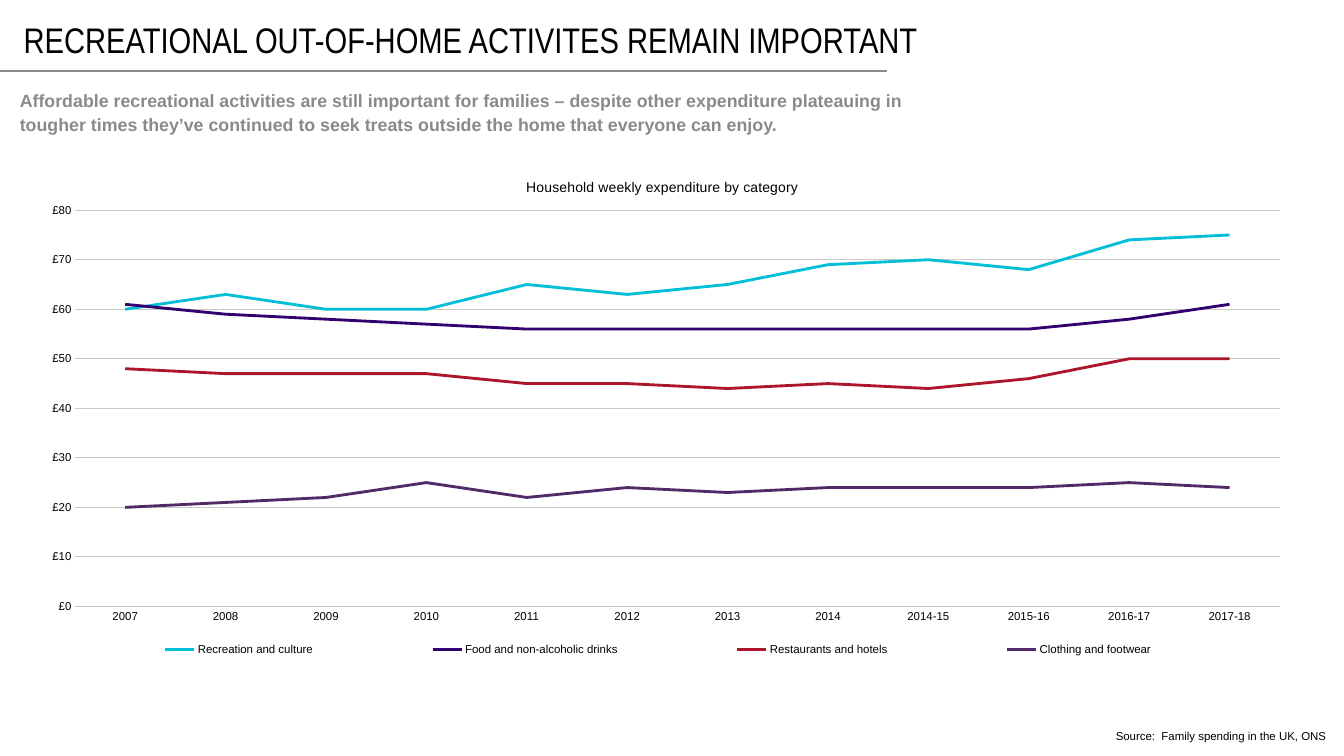
"""Build the slide on household weekly expenditure by category."""
from dataclasses import dataclass

import lxml.etree
import pptx
import pptx.chart.chart
import pptx.chart.data
import pptx.dml.color
import pptx.enum.chart
import pptx.enum.shapes
import pptx.enum.text
import pptx.oxml.ns
import pptx.slide
import pptx.util
from pptx.util import Cm

BLACK = "000000"
GREY = "8A8A8D"
GRID = "CAC8C8"
YEARS = [str(y) for y in range(2007, 2015)] + [f"20{y}-{y + 1}" for y in range(14, 18)]


@dataclass(frozen=True)
class Category:
    name: str
    color: str
    pounds: tuple[int, ...]


@dataclass(frozen=True)
class Label:
    text: str
    box: tuple[float, float, float, float]
    format: dict


CATEGORIES = (
    Category("Recreation and culture", "00BFD6",
             (60, 63, 60, 60, 65, 63, 65, 69, 70, 68, 74, 75)),
    Category("Food and non-alcoholic drinks", "33006F",
             (61, 59, 58, 57, 56, 56, 56, 56, 56, 56, 58, 61)),
    Category("Restaurants and hotels", "AC162C",
             (48, 47, 47, 47, 45, 45, 44, 45, 44, 46, 50, 50)),
    Category("Clothing and footwear", "502B68",
             (20, 21, 22, 25, 22, 24, 23, 24, 24, 24, 25, 24)),
)

LABELS = (
    Label("RECREATIONAL OUT-OF-HOME ACTIVITES REMAIN IMPORTANT", (0.66, 0.66, 34.5, 0.84),
          dict(size=28, font="Arial Narrow", middle=True, inset=0)),
    Label("Affordable recreational activities are still important for families – despite "
          "other expenditure plateauing in tougher times they’ve continued to seek treats "
          "outside the home that everyone can enjoy.", (0.3, 2.29, 26.14, 1.55),
          dict(size=14, color=GREY, bold=True, spacing=19)),
    Label("Source:  Family spending in the UK, ONS", (24.64, 19.86, 12.45, 0.86),
          dict(size=9, right=True, spacing=19)),
)


def rgb(color: str) -> pptx.dml.color.RGBColor:
    return pptx.dml.color.RGBColor.from_string(color)


def style_font(font, size: float, color: str = BLACK, name: str = "Arial",
               bold: bool = False) -> None:
    font.size = pptx.util.Pt(size)
    font.name = name
    font.bold = bold
    font.color.rgb = rgb(color)


def style_line(line, color: str, width: float) -> None:
    line.color.rgb = rgb(color)
    line.width = pptx.util.Pt(width)


def add_text(s: pptx.slide.Slide, text: str, box: tuple[float, ...], *, size: float,
             font: str = "Arial", color: str = BLACK, bold: bool = False,
             right: bool = False, middle: bool = False, spacing: float | None = None,
             inset: float | None = None) -> None:
    tf = s.shapes.add_textbox(*map(Cm, box)).text_frame
    tf.word_wrap = True
    if inset is not None:
        tf.margin_left = tf.margin_right = tf.margin_top = tf.margin_bottom = Cm(inset)
    if middle:
        tf.vertical_anchor = pptx.enum.text.MSO_ANCHOR.MIDDLE
    p = tf.paragraphs[0]
    if right:
        p.alignment = pptx.enum.text.PP_ALIGN.RIGHT
    if spacing:
        p.line_spacing = pptx.util.Pt(spacing)
    r = p.add_run()
    r.text = text
    style_font(r.font, size, color, font, bold)


def add_rule(s: pptx.slide.Slide, y: float, width: float) -> None:
    line = s.shapes.add_connector(pptx.enum.shapes.MSO_CONNECTOR.STRAIGHT,
                                  Cm(0), Cm(y), Cm(width), Cm(y))
    style_line(line.line, GREY, 1.5)
    lxml.etree.SubElement(line._element.spPr, pptx.oxml.ns.qn("a:effectLst"))


def place(element, inner: bool = False, **fractions: float) -> None:
    """Place a chart part by fractions of the chart's width and height."""
    qn = pptx.oxml.ns.qn
    for old in element.findall(qn("c:layout")):
        element.remove(old)
    layout = lxml.etree.Element(qn("c:layout"))
    manual = lxml.etree.SubElement(layout, qn("c:manualLayout"))
    settings = {"layoutTarget": "inner"} if inner else {}
    settings |= {"xMode": "edge", "yMode": "edge"}
    settings |= {key: str(value) for key, value in fractions.items()}
    for key, value in settings.items():
        lxml.etree.SubElement(manual, qn(f"c:{key}")).set("val", value)
    overlay = element.find(qn("c:overlay"))
    if overlay is None:
        element.insert(0, layout)
    else:
        overlay.addprevious(layout)


def style_axes(chart: pptx.chart.chart.Chart) -> None:
    for axis in (chart.category_axis, chart.value_axis):
        axis.major_tick_mark = axis.minor_tick_mark = pptx.enum.chart.XL_TICK_MARK.NONE
        style_font(axis.tick_labels.font, 9)
    style_line(chart.category_axis.format.line, GRID, 0.75)
    values = chart.value_axis
    values.minimum_scale, values.maximum_scale, values.major_unit = 0, 80, 10
    values.tick_labels.number_format = '"£"#,##0'
    values.tick_labels.number_format_is_linked = False
    values.format.line.fill.background()
    style_line(values.major_gridlines.format.line, GRID, 0.75)


def add_spending_chart(s: pptx.slide.Slide) -> None:
    data = pptx.chart.data.CategoryChartData()
    data.categories = YEARS
    for category in CATEGORIES:
        data.add_series(category.name, category.pounds)
    chart = s.shapes.add_chart(pptx.enum.chart.XL_CHART_TYPE.LINE, Cm(0.66), Cm(4.29),
                               Cm(35.61), Cm(14.12), data).chart
    style_font(chart.font, 10)
    chart.plots[0].vary_by_categories = False
    for series, category in zip(chart.plots[0].series, CATEGORIES):
        series.smooth = False
        series.marker.style = pptx.enum.chart.XL_MARKER_STYLE.NONE
        style_line(series.format.line, category.color, 2.25)
    style_axes(chart)

    chart.has_title = True
    title = chart.chart_title
    r = title.text_frame.paragraphs[0].add_run()
    r.text = "Household weekly expenditure by category"
    style_font(r.font, 11)
    title.include_in_layout = False
    chart.has_legend = True
    chart.legend.position = pptx.enum.chart.XL_LEGEND_POSITION.BOTTOM
    chart.legend.include_in_layout = False
    style_font(chart.legend.font, 9)

    place(title._element, x=0.39, y=0.04)
    place(chart.legend._element, x=0.02, y=0.95, w=0.95, h=0.05)
    place(chart._chartSpace.chart.plotArea, inner=True, x=0.04, y=0.11, w=0.94, h=0.78)


def main() -> None:
    prs = pptx.Presentation()
    prs.slide_width, prs.slide_height = Cm(37.34), Cm(21.01)
    s = prs.slides.add_slide(prs.slide_layouts[6])
    add_rule(s, 1.98, 24.64)
    add_spending_chart(s)
    for label in LABELS:
        add_text(s, label.text, label.box, **label.format)
    prs.save("out.pptx")


if __name__ == "__main__":
    main()
